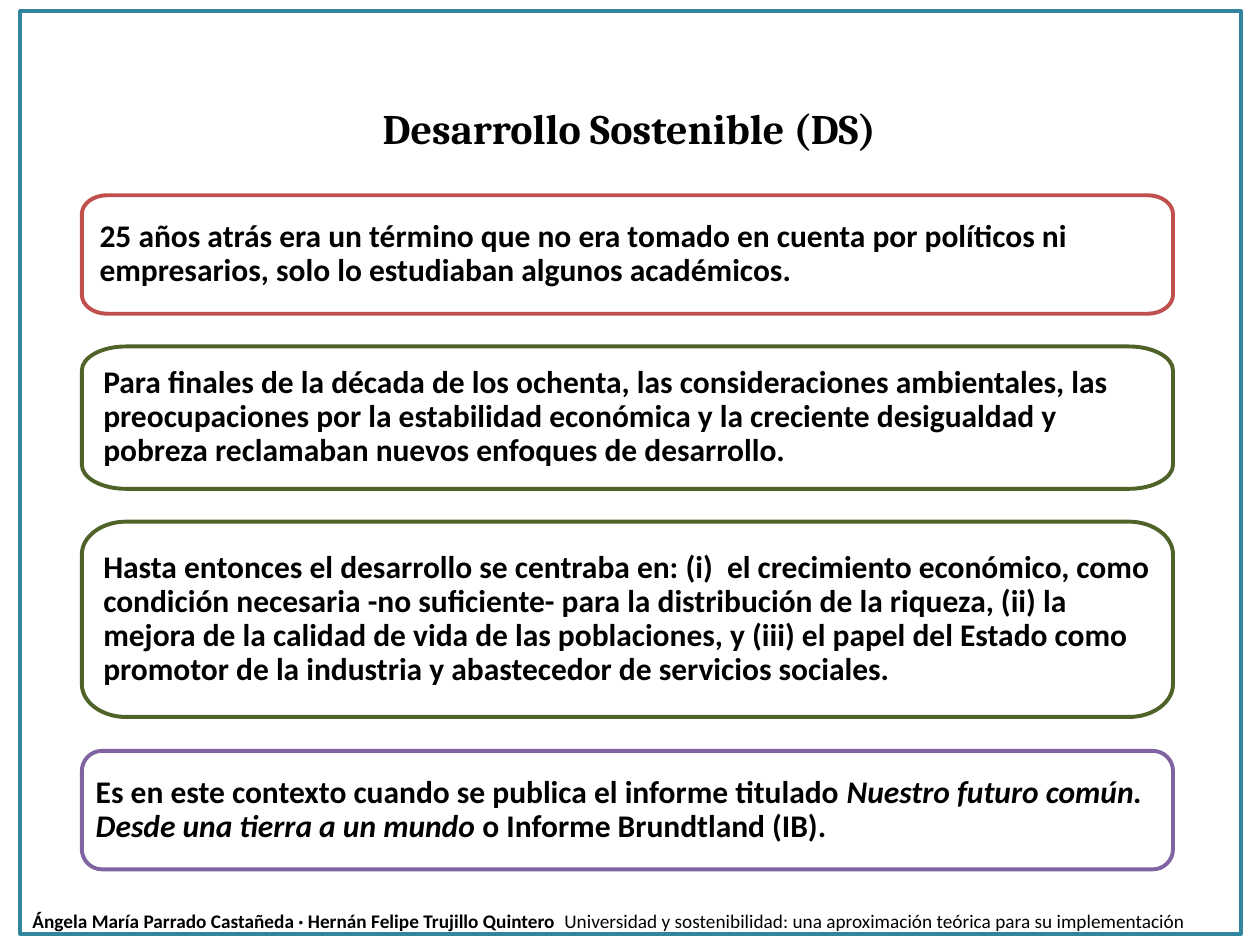
from dataclasses import dataclass

import lxml.etree
import pptx
import pptx.dml.color
import pptx.enum.shapes
import pptx.enum.text
import pptx.oxml.ns
import pptx.util

EMU_PER_PX = 9144  # 100 px to the inch
CURVE_RATIO = 0.55  # control point distance that makes a quarter ellipse
PANEL_LEFT, PANEL_WIDTH = 65, 866

COLORS = {
    "text": "000000",
    "panel": "FFFFFF",
    "frame": "31859C",
    "red": "C0504D",
    "green": "4F6228",
    "purple": "8064A2",
}


@dataclass(frozen=True)
class Run:
    text: str
    bold: bool = True
    italic: bool = False


@dataclass(frozen=True)
class Panel:
    top: int
    height: int
    radius_x: int
    radius_y: int
    inset: int
    color: str
    runs: tuple[Run, ...]


PANELS = (
    Panel(155, 94, 20, 15, 14, "red", (
        Run("25 años atrás era un término que no era tomado en cuenta por políticos ni "
            "empresarios, solo lo estudiaban algunos académicos."),
    )),
    Panel(275, 113, 35, 19, 17, "green", (
        Run("Para finales de la década de los ochenta, las consideraciones ambientales, las "
            "preocupaciones por la estabilidad económica y la creciente desigualdad y "
            "pobreza reclamaban nuevos enfoques de desarrollo."),
    )),
    Panel(596, 94, 16, 16, 11, "purple", (
        Run("Es en este contexto cuando se publica el informe titulado "),
        Run("Nuestro futuro común. Desde una tierra a un mundo ", italic=True),
        Run("o Informe Brundtland (IB)."),
    )),
    Panel(414, 155, 35, 26, 17, "green", (
        Run("Hasta entonces el desarrollo se centraba en: (i)  el crecimiento económico, como "
            "condición necesaria -no suficiente- para la distribución de la riqueza, (ii) la "
            "mejora de la calidad de vida de las poblaciones, y (iii) el papel del Estado como "
            "promotor de la industria y abastecedor de servicios sociales."),
    )),
)


def px(length: int) -> pptx.util.Emu:
    return pptx.util.Emu(length * EMU_PER_PX)


def rgb(name: str) -> pptx.dml.color.RGBColor:
    return pptx.dml.color.RGBColor.from_string(COLORS[name])


def write_text(shape, runs: tuple[Run, ...], *, size: int, font: str = "Calibri",
               align=pptx.enum.text.PP_ALIGN.LEFT, anchor=pptx.enum.text.MSO_ANCHOR.TOP,
               inset_x: int = 10, inset_y: int = 5, line_spacing: float = 1.0) -> None:
    frame = shape.text_frame
    frame.word_wrap = True
    frame.auto_size = pptx.enum.text.MSO_AUTO_SIZE.NONE
    frame.vertical_anchor = anchor
    frame.margin_left = frame.margin_right = px(inset_x)
    frame.margin_top = frame.margin_bottom = px(inset_y)
    paragraph = frame.paragraphs[0]
    paragraph.alignment = align
    paragraph.line_spacing = line_spacing
    for item in runs:
        run = paragraph.add_run()
        run.text = item.text
        run.font.name = font
        run.font.size = pptx.util.Pt(size)
        run.font.bold = item.bold
        run.font.italic = item.italic
        run.font.color.rgb = rgb("text")


def style_outline(shape, color: str) -> None:
    shape.shadow.inherit = False
    shape.line.color.rgb = rgb(color)
    shape.line.width = pptx.util.Pt(2.25)


def panel_outline(panel: Panel) -> list[tuple[int, int]]:
    """Return the ends of the straight sides, clockwise from the upper left side."""
    left, right = PANEL_LEFT, PANEL_LEFT + PANEL_WIDTH
    top, bottom = panel.top, panel.top + panel.height
    near_x, far_x = left + panel.radius_x, right - panel.radius_x
    near_y, far_y = top + panel.radius_y, bottom - panel.radius_y
    points = ((left, near_y), (near_x, top), (far_x, top), (right, near_y),
              (right, far_y), (far_x, bottom), (near_x, bottom), (left, far_y))
    return [(px(x), px(y)) for x, y in points]


def round_corners(shape) -> None:
    """Turn every other segment of the outline, starting with the first, into a curve."""
    qualify = pptx.oxml.ns.qn
    vertices = [(int(point.get("x")), int(point.get("y")))
                for point in shape._element.iter(qualify("a:pt"))]
    segments = list(shape._element.iter(qualify("a:lnTo")))
    for index in range(0, len(segments), 2):
        start, end = vertices[index], vertices[index + 1]
        leaves_vertically = index % 4 == 0
        corner = (start[0], end[1]) if leaves_vertically else (end[0], start[1])
        controls = [tuple(round(a + CURVE_RATIO * (b - a)) for a, b in zip(origin, corner))
                    for origin in (start, end)]
        curve = lxml.etree.Element(qualify("a:cubicBezTo"))
        for x, y in (*controls, end):
            lxml.etree.SubElement(curve, qualify("a:pt"), x=str(x), y=str(y))
        segments[index].getparent().replace(segments[index], curve)


def draw_panel(slide, panel: Panel) -> None:
    start, *others = panel_outline(panel)
    builder = slide.shapes.build_freeform(*start)
    builder.add_line_segments([*others, start], close=True)
    shape = builder.convert_to_shape()
    round_corners(shape)
    style_outline(shape, panel.color)
    shape.fill.solid()
    shape.fill.fore_color.rgb = rgb("panel")
    write_text(shape, panel.runs, size=18, anchor=pptx.enum.text.MSO_ANCHOR.MIDDLE,
               inset_x=panel.inset, inset_y=panel.inset, line_spacing=0.9)


def main() -> None:
    presentation = pptx.Presentation()
    presentation.slide_width, presentation.slide_height = px(1000), px(750)
    slide = presentation.slides.add_slide(presentation.slide_layouts[5])

    title = slide.shapes.title
    title.left, title.top, title.width, title.height = map(px, (34, 76, 938, 50))
    write_text(title, (Run("Desarrollo Sostenible (DS) "),), size=24, font="Cambria",
               align=pptx.enum.text.PP_ALIGN.CENTER)

    border = slide.shapes.add_shape(pptx.enum.shapes.MSO_SHAPE.RECTANGLE,
                                    *map(px, (16, 9, 969, 732)))
    border.fill.background()
    style_outline(border, "frame")

    footer = slide.shapes.add_textbox(*map(px, (16, 717, 967, 29)))
    write_text(footer, (
        Run("Ángela María Parrado Castañeda · Hernán Felipe Trujillo Quintero  "),
        Run("Universidad y sostenibilidad: una aproximación teórica para su implementación",
            bold=False),
    ), size=11)

    for panel in PANELS:
        draw_panel(slide, panel)

    presentation.save("out.pptx")


if __name__ == "__main__":
    main()
